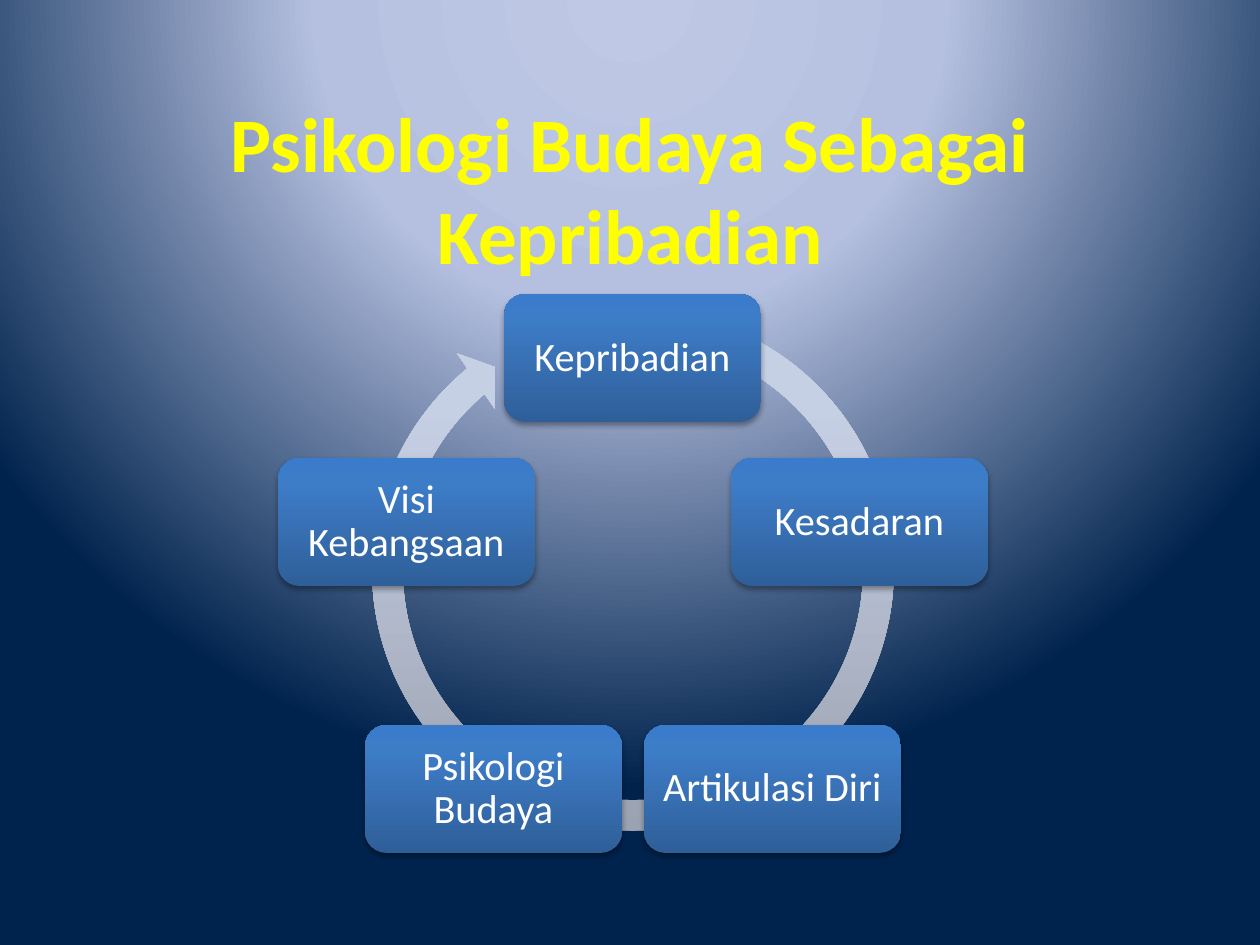
from math import cos, radians, sin

from lxml.etree import SubElement
from pptx import Presentation
from pptx.dml.color import RGBColor
from pptx.enum.shapes import MSO_SHAPE
from pptx.enum.text import MSO_ANCHOR, PP_ALIGN
from pptx.oxml.ns import qn
from pptx.util import Pt

PX = 914400 // 126  # EMU per px

YELLOW = RGBColor(0xFF, 0xFF, 0x00)
WHITE = RGBColor(0xFF, 0xFF, 0xFF)
BLACK = RGBColor(0x00, 0x00, 0x00)
BACKDROP = [(0, RGBColor(0xBF, 0xC9, 0xE5)), (40, RGBColor(0xB5, 0xC0, 0xE0)),
            (100, RGBColor(0x00, 0x23, 0x4D))]
RING = [(0, RGBColor(0x99, 0xA0, 0xAF)), (80, RGBColor(0xC6, 0xD0, 0xE4)),
        (100, RGBColor(0xC7, 0xD1, 0xE5))]
BOX = [(0, RGBColor(0x2F, 0x5F, 0x99)), (80, RGBColor(0x3D, 0x7C, 0xC7)),
       (100, RGBColor(0x3A, 0x7C, 0xCB))]


def fill_gradient(fill, element, stops):
    """Give the fill a gradient with these stops and return its XML."""
    fill.solid()
    solid = element.find(".//" + qn("a:solidFill"))
    gradient = solid.makeelement(qn("a:gradFill"), {"rotWithShape": "1"})
    stop_list = SubElement(gradient, qn("a:gsLst"))
    for percent, color in stops:
        stop = SubElement(stop_list, qn("a:gs"), pos=str(percent * 1000))
        SubElement(stop, qn("a:srgbClr"), val=str(color))
    solid.getparent().replace(solid, gradient)
    return gradient


def add_part(group, preset, stops, left, top, width, height):
    """Add an unlined shape that is shaded from bottom to top."""
    part = group.shapes.add_shape(preset, left * PX, top * PX, width * PX, height * PX)
    gradient = fill_gradient(part.fill, part.element.spPr, stops)
    SubElement(gradient, qn("a:lin"), ang=str(270 * 60000), scaled="0")
    part.line.fill.background()
    part.shadow.inherit = False
    return part


prs = Presentation()
prs.slide_width, prs.slide_height = 1260 * PX, 945 * PX
slide = prs.slides.add_slide(prs.slide_layouts[5])

# Background: a glow centred above the slide
glow = fill_gradient(slide.background.fill, slide.element.cSld, BACKDROP)
circle = SubElement(glow, qn("a:path"), path="circle")
SubElement(circle, qn("a:fillToRect"), l="50000", t="-80000", r="50000", b="180000")

# Title
title = slide.shapes.title
title.left, title.top, title.width, title.height = 95 * PX, 86 * PX, 1071 * PX, 203 * PX
title.text_frame.text = "Psikologi Budaya Sebagai Kepribadian"
title.text_frame.vertical_anchor = MSO_ANCHOR.MIDDLE
heading = title.text_frame.paragraphs[0]
heading.alignment = PP_ALIGN.CENTER
heading.font.name = "Calibri"
heading.font.size = Pt(44)
heading.font.bold = True
heading.font.color.rgb = YELLOW

# Circular arrow behind the boxes: thickness, head angle, end, start, head width
cycle = slide.shapes.add_group_shape()
ring = add_part(cycle, MSO_SHAPE.CIRCULAR_ARROW, RING, 354, 291, 558, 558)
ring_shape = [0.06, 5.51 * 0.6, 230.25 * 0.6, 289.37 * 0.6, 0.06]
ring_shape[0] = 5.5 / 100
for index, value in enumerate(ring_shape):
    ring.adjustments[index] = value

# Five boxes clockwise from the top of the cycle
CENTER_X, CENTER_Y, RADIUS = 633, 596, 238
BOX_W, BOX_H, INSET = 257, 128, 12
stages = ["Kepribadian", "Kesadaran", "Artikulasi Diri", "Psikologi Budaya",
          "Visi Kebangsaan"]
for index, stage in enumerate(stages):
    angle = radians(index * 360 / len(stages))
    left = round(CENTER_X + RADIUS * sin(angle) - BOX_W / 2)
    top = round(CENTER_Y - RADIUS * cos(angle) - BOX_H / 2)
    box = add_part(cycle, MSO_SHAPE.ROUNDED_RECTANGLE, BOX, left, top, BOX_W, BOX_H)

    # Soft shadow below the box
    effects = box.element.spPr.find(qn("a:effectLst"))
    shadow = SubElement(effects, qn("a:outerShdw"), blurRad=str(Pt(3.1)),
                        dist=str(Pt(1.8)), dir=str(90 * 60000), rotWithShape="0")
    shade = SubElement(shadow, qn("a:srgbClr"), val=str(BLACK))
    SubElement(shade, qn("a:alpha"), val="35000")

    # Label
    frame = box.text_frame
    frame.text = stage
    frame.word_wrap = True
    frame.vertical_anchor = MSO_ANCHOR.MIDDLE
    frame.margin_left = frame.margin_right = INSET * PX
    frame.margin_top = frame.margin_bottom = INSET * PX
    label = frame.paragraphs[0]
    label.alignment = PP_ALIGN.CENTER
    label.line_spacing = 0.9
    label.font.name = "Calibri"
    label.font.size = Pt(23)
    label.font.color.rgb = WHITE

prs.save("out.pptx")
